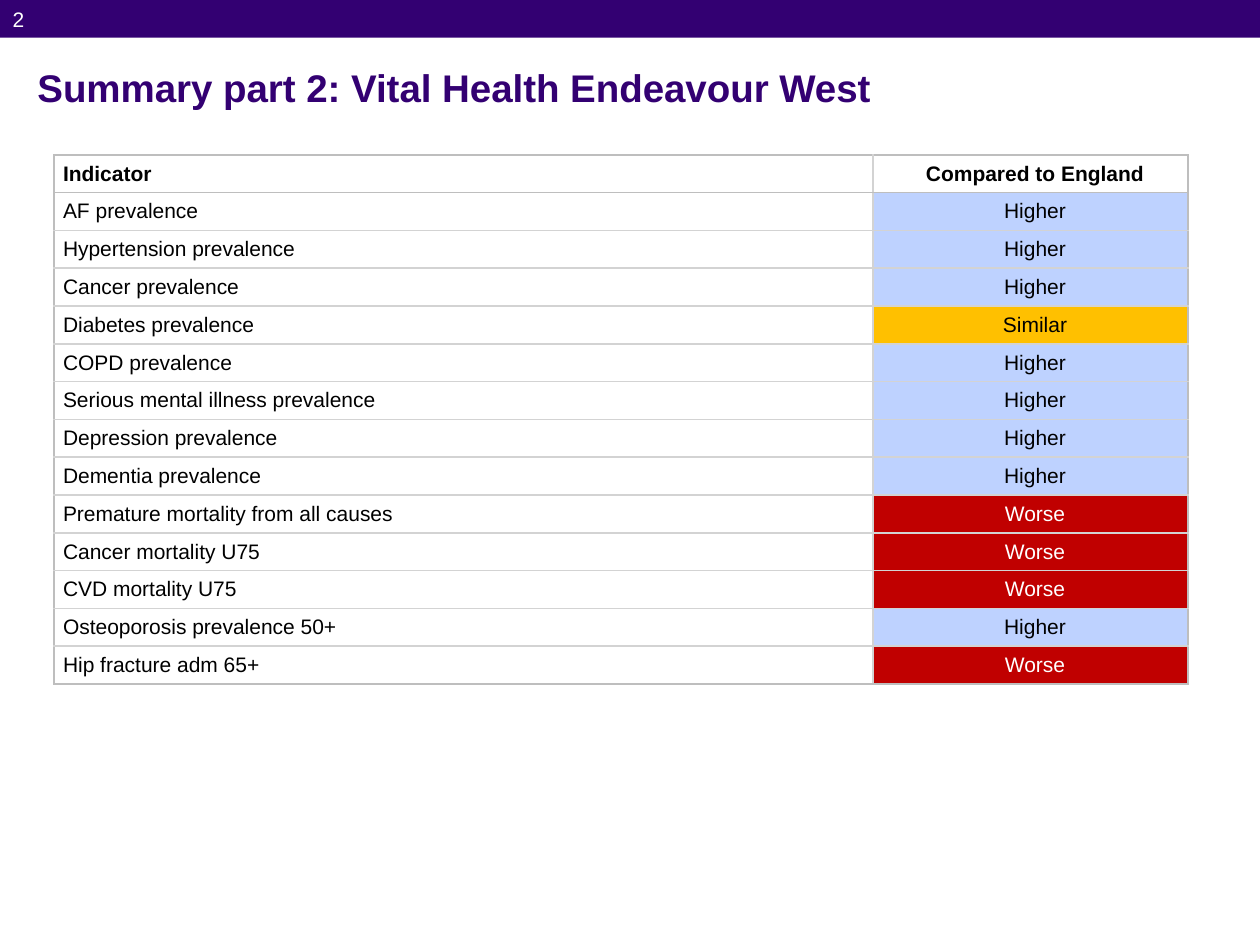
import pptx
import pptx.util
import pptx.dml.color
import pptx.enum.shapes
import pptx.enum.text
import pptx.oxml
import pptx.oxml.ns
from pptx.util import Cm

PURPLE, BLUE, AMBER, RED = "330072", "BED2FF", "FFC000", "C00000"
OUTER, INNER = "BEBEBE", "D3D3D3"
ANCHOR = pptx.enum.text.MSO_ANCHOR


def rgb(value):
    return pptx.dml.color.RGBColor.from_string(value)


def put_text(tf, text, size=12, color="000000", bold=False, align="LEFT", before=0, indent=0):
    tf.word_wrap = True
    p = tf.paragraphs[0]
    p.alignment = getattr(pptx.enum.text.PP_ALIGN, align)
    p.space_before = pptx.util.Pt(before)
    pPr = p._p.get_or_add_pPr()
    pPr.set("marL", str(Cm(indent)))
    pPr.set("indent", "0")
    pPr.append(pptx.oxml.parse_xml(f"<a:buNone {pptx.oxml.ns.nsdecls('a')}/>"))
    r = p.add_run()
    r.text = text
    r.font.name = "Arial"
    r.font.size = pptx.util.Pt(size)
    r.font.bold = bold
    r.font.color.rgb = rgb(color)


prs = pptx.Presentation()
prs.slide_width, prs.slide_height = Cm(25.4), Cm(19.05)
s = prs.slides.add_slide(prs.slide_layouts[1])
title, number = s.shapes.title, s.placeholders[1]

bar = s.shapes.add_shape(pptx.enum.shapes.MSO_SHAPE.RECTANGLE, 0, 0, prs.slide_width, Cm(0.76))
bar.shadow.inherit = False
bar.fill.solid()
bar.fill.fore_color.rgb = rgb(PURPLE)
bar.line.fill.background()
title.element.addprevious(bar.element)

title.left, title.top, title.width, title.height = Cm(0.5), Cm(1.19), Cm(24.4), Cm(1.15)
title.text_frame.auto_size = pptx.enum.text.MSO_AUTO_SIZE.NONE
title.text_frame.vertical_anchor = ANCHOR.MIDDLE
put_text(title.text_frame, "Summary part 2: Vital Health Endeavour West",
         size=22, color=PURPLE, bold=True, before=4)

number.left, number.top, number.width, number.height = 0, 0, Cm(1.6), Cm(1.6)
number.text_frame.auto_size = pptx.enum.text.MSO_AUTO_SIZE.NONE
number.text_frame.vertical_anchor = ANCHOR.TOP
put_text(number.text_frame, "2", color="FFFFFF", before=1.5)

rows = [
    ("Indicator", "Compared to England"),
    ("AF prevalence", "Higher"),
    ("Hypertension prevalence", "Higher"),
    ("Cancer prevalence", "Higher"),
    ("Diabetes prevalence", "Similar"),
    ("COPD prevalence", "Higher"),
    ("Serious mental illness prevalence", "Higher"),
    ("Depression prevalence", "Higher"),
    ("Dementia prevalence", "Higher"),
    ("Premature mortality from all causes", "Worse"),
    ("Cancer mortality U75", "Worse"),
    ("CVD mortality U75", "Worse"),
    ("Osteoporosis prevalence 50+", "Higher"),
    ("Hip fracture adm 65+", "Worse"),
]
fills = {"Higher": BLUE, "Similar": AMBER, "Worse": RED}
last = len(rows) - 1

table = s.shapes.add_table(len(rows), 2, Cm(1.09), Cm(3.12), Cm(22.86), Cm(10.67)).table
table.first_row = table.horz_banding = False
table.columns[0].width, table.columns[1].width = Cm(16.51), Cm(6.35)

for i, row in enumerate(rows):
    for j, text in enumerate(row):
        cell = table.cell(i, j)
        cell.margin_left = cell.margin_right = cell.margin_top = cell.margin_bottom = 0
        cell.vertical_anchor = ANCHOR.MIDDLE
        put_text(cell.text_frame, text, bold=i == 0, indent=0.18,
                 color="FFFFFF" if text == "Worse" else "000000",
                 align="CENTER" if j else "LEFT")
        if text in fills:
            cell.fill.solid()
            cell.fill.fore_color.rgb = rgb(fills[text])
        else:
            cell.fill.background()
        edges = {"L": j == 0, "R": j == 1, "T": i <= 1, "B": i in (0, last)}
        for k, (side, outer) in enumerate(edges.items()):
            cell._tc.get_or_add_tcPr().insert(k, pptx.oxml.parse_xml(
                f'<a:ln{side} {pptx.oxml.ns.nsdecls("a")} w="12700"><a:solidFill>'
                f'<a:srgbClr val="{OUTER if outer else INNER}"/></a:solidFill></a:ln{side}>'))

prs.save("out.pptx")
